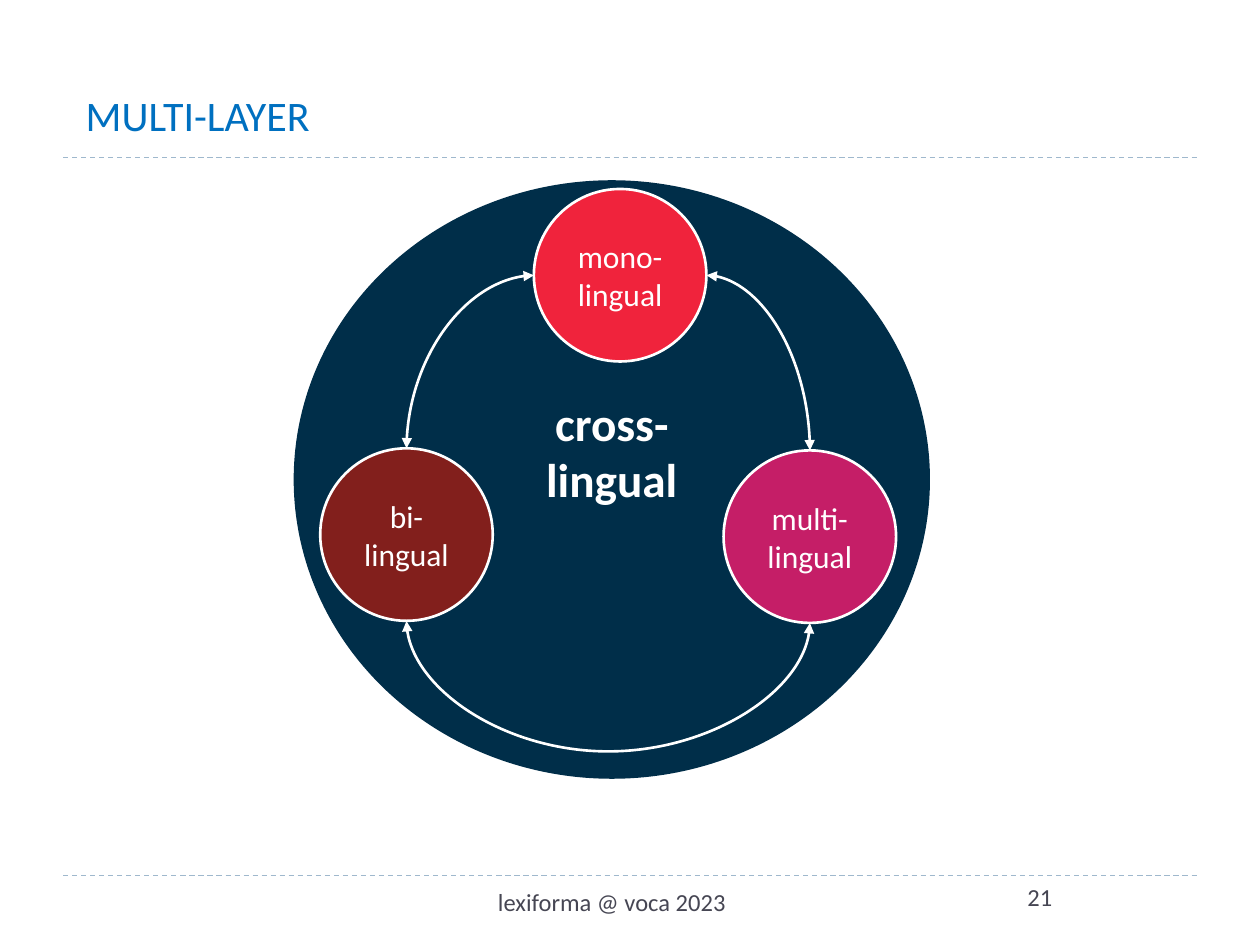
from lxml import etree
from pptx import Presentation
from pptx import util as u
from pptx.dml.color import RGBColor
from pptx.enum import dml, shapes, text
from pptx.oxml.ns import qn

Pt = u.Pt
THEME = {
    "font": "Calibri",
    "title": "0070C0", "footer": "464653", "rule": "9FB8CD", "white": "FFFFFF",
    "cross": "002E49", "mono": "F0233C", "bi": "821F1C", "multi": "C51E67",
    "title_size": 24, "cross_size": 27, "node_size": 18, "footer_size": 14,
}


def write(sp, words, size, color, align=text.PP_ALIGN.CENTER, bold=False):
    tf = sp.text_frame
    tf.word_wrap = True
    tf.text = words
    for p in tf.paragraphs:
        p.alignment = align
        for r in p.runs:
            r.font.name, r.font.size, r.font.bold = THEME["font"], Pt(THEME[size]), bold
            r.font.color.rgb = RGBColor.from_string(THEME[color])


def style_line(c, color, width):
    c.line.color.rgb = RGBColor.from_string(THEME[color])
    c.line.width = Pt(width)
    etree.SubElement(c._element.spPr, qn("a:effectLst"))


prs = Presentation()
prs.slide_width, prs.slide_height = Pt(720), Pt(540)
s = prs.slides.add_slide(prs.slide_layouts[5])

# Dashed rules under the title and above the footer
for y in (500.4, 90):
    c = s.shapes.add_connector(shapes.MSO_CONNECTOR.STRAIGHT, Pt(36), Pt(y), Pt(684), Pt(y))
    style_line(c, "rule", 0.75)
    c.line.dash_style = dml.MSO_LINE.DASH

# Title
title = s.shapes.title
title.left, title.top, title.width, title.height = Pt(41.76), Pt(47.5), Pt(561), Pt(36)
write(title, "MULTI-LAYER", "title_size", "title", text.PP_ALIGN.LEFT)
title.text_frame.vertical_anchor = text.MSO_ANCHOR.BOTTOM
title.text_frame.auto_size = text.MSO_AUTO_SIZE.NONE

# Footer and page number
for words, x, y, w, h in (("lexiforma @ voca 2023", 167.8, 503.3, 363.6, 26.6),
                          ("21", 516.2, 500.4, 156.2, 28.8)):
    sp = s.shapes.add_textbox(Pt(x), Pt(y), Pt(w), Pt(h))
    write(sp, words, "footer_size", "footer")

# Cross-lingual disc, then the three layers on it
disc = 98.6
ovals = {}
for name, words, x, y, w, h in (
    ("cross", "cross-\nlingual", 167.8, 103, 363.6, 342),
    ("mono", "mono-lingual", 305.1, 108, disc, disc),
    ("bi", "bi-\vlingual", 183, 256.2, disc, disc),
    ("multi", "multi-\vlingual", 413.5, 257.4, disc, disc),
):
    sp = s.shapes.add_shape(shapes.MSO_SHAPE.OVAL, Pt(x), Pt(y), Pt(w), Pt(h))
    sp.shadow.inherit = False
    sp.fill.solid()
    sp.fill.fore_color.rgb = RGBColor.from_string(THEME[name])
    sp.text_frame.vertical_anchor = text.MSO_ANCHOR.MIDDLE
    if name == "cross":
        sp.line.fill.background()
        sp.text_frame.margin_bottom = Pt(36.6)  # lifts the label above centre
        write(sp, words, "cross_size", "white", bold=True)
    else:
        sp.line.color.rgb = RGBColor.from_string(THEME["white"])
        sp.line.width = Pt(1.5)
        write(sp, words, "node_size", "white")
    ovals[name] = sp

# Curved double arrows between the layers; oval sites count from the top, anticlockwise
TOP, LEFT, BOTTOM, RIGHT = 0, 2, 4, 6
for start, site1, end, site2, box, turn, flip, preset, bend in (
    ("mono", LEFT, "bi", TOP, (232.3, 157.3, 72.8, 98.9), 180, "flipV", "curvedConnector2", None),
    ("bi", BOTTOM, "multi", BOTTOM, (347, 240.2, 1.13, 230.5), 270, "flipH",
     "curvedConnector3", 6572200),
    ("multi", TOP, "mono", RIGHT, (383.2, 177.8, 100.1, 59.1), 270, "flipV",
     "curvedConnector2", None),
):
    c = s.shapes.add_connector(shapes.MSO_CONNECTOR.CURVE, 0, 0, 0, 0)
    c.begin_connect(ovals[start], 0)
    c.end_connect(ovals[end], 0)
    # begin_connect knows four sites only, an oval has eight
    for tag, site in (("a:stCxn", site1), ("a:endCxn", site2)):
        next(c._element.iter(qn(tag))).set("idx", str(site))
    c.left, c.top, c.width, c.height = [Pt(v) for v in box]
    xfrm = c._element.spPr.find(qn("a:xfrm"))
    for key in ("flipH", "flipV"):
        xfrm.set(key, "1" if key == flip else "0")
    xfrm.set("rot", str(turn * 60000))
    geom = c._element.spPr.find(qn("a:prstGeom"))
    geom.set("prst", preset)
    if bend:
        etree.SubElement(geom.find(qn("a:avLst")), qn("a:gd"), name="adj1", fmla=f"val {bend}")
    style_line(c, "white", 1.5)
    ln = c._element.spPr.find(qn("a:ln"))
    for tag in ("a:headEnd", "a:tailEnd"):
        etree.SubElement(ln, qn(tag), type="triangle")

prs.save("out.pptx")
